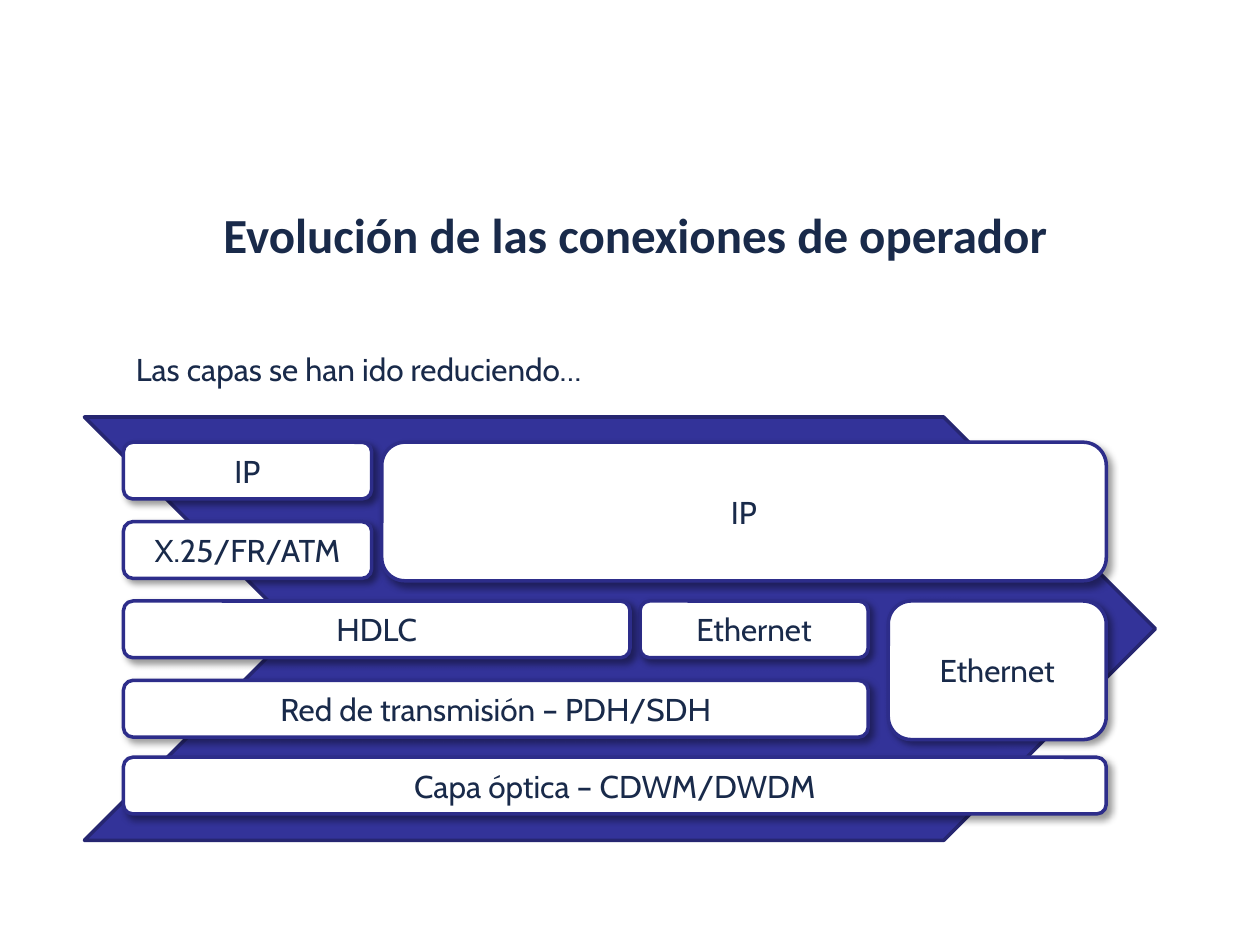
from lxml.etree import SubElement
from pptx import Presentation
from pptx.dml.color import RGBColor
from pptx.enum.shapes import MSO_SHAPE
from pptx.enum.text import MSO_ANCHOR, MSO_AUTO_SIZE, PP_ALIGN
from pptx.oxml.ns import qn
from pptx.util import Inches, Pt

TITLE = "Evolución de las conexiones de operador"
SUBTITLE = "Las capas se han ido reduciendo…"
INK, WHITE = "192A4A", "FFFFFF"
ARROW_FILL, ARROW_LINE, LAYER_LINE = "333399", "262671", "2D2D8A"

# Layers: text, left, right, top row, rows spanned
ROW_TOPS = [3.51, 4.14, 4.77, 5.4, 6.01]
ROW_HEIGHT, TALL_HEIGHT = 0.45, 1.1
LEFT, RIGHT = 0.98, 8.78
LAYERS = [
    ("Capa óptica – CDWM/DWDM", LEFT, RIGHT, 4, 1),
    ("Red de transmisión – PDH/SDH", LEFT, 6.89, 3, 1),
    ("Ethernet", 5.08, 6.89, 2, 1),
    ("HDLC", LEFT, 5, 2, 1),
    ("IP", LEFT, 2.95, 0, 1),
    ("X.25/FR/ATM", LEFT, 2.95, 1, 1),
    ("IP", 3.03, RIGHT, 0, 2),
    ("Ethernet", 7.05, RIGHT, 2, 2),
]


def color(value):
    return RGBColor.from_string(value)


def write(shape, text, font_name="Cabin", size=18, bold=False, align=PP_ALIGN.CENTER):
    shape.text_frame.word_wrap = True
    paragraph = shape.text_frame.paragraphs[0]
    paragraph.text = text
    paragraph.alignment = align
    font = paragraph.font
    font.name, font.size, font.bold = font_name, Pt(size), bold
    font.color.rgb = color(INK)
    return paragraph


def add_box(slide, kind, left, top, width, height, fill, line):
    shape = slide.shapes.add_shape(
        kind, Inches(left), Inches(top), Inches(width), Inches(height))
    shape.shadow.inherit = False
    shape.fill.solid()
    shape.fill.fore_color.rgb = color(fill)
    shape.line.color.rgb = color(line)
    shape.line.width = Pt(2)
    return shape


def add_shadow(shape):
    effects = shape.element.spPr.find(qn("a:effectLst"))
    shadow = SubElement(effects, qn("a:outerShdw"), blurRad=str(Pt(4)),
                        dist=str(Pt(3)), dir=str(45 * 60000), algn="tl", rotWithShape="0")
    shade = SubElement(shadow, qn("a:srgbClr"), val="000000")
    SubElement(shade, qn("a:alpha"), val="40000")


def add_layer(slide, text, left, right, row, span):
    height = ROW_HEIGHT if span == 1 else TALL_HEIGHT
    shape = add_box(slide, MSO_SHAPE.ROUNDED_RECTANGLE, left, ROW_TOPS[row],
                    right - left, height, WHITE, LAYER_LINE)
    add_shadow(shape)
    shape.text_frame.vertical_anchor = MSO_ANCHOR.MIDDLE
    properties = write(shape, text)._p.get_or_add_pPr()
    properties.set("marL", str(Inches(0.38)))
    properties.set("indent", str(Inches(-0.38)))


def add_label(slide, left, top, width, height):
    label = slide.shapes.add_textbox(
        Inches(left), Inches(top), Inches(width), Inches(height))
    label.text_frame.auto_size = MSO_AUTO_SIZE.SHAPE_TO_FIT_TEXT
    return label


def main():
    presentation = Presentation()
    presentation.slide_width, presentation.slide_height = Inches(10), Inches(7.5)
    slide = presentation.slides.add_slide(presentation.slide_layouts[6])

    # Background arrow
    add_box(slide, MSO_SHAPE.CHEVRON, 0.67, 3.31, 8.5, 3.36, ARROW_FILL, ARROW_LINE)

    # Title and subtitle
    title = add_label(slide, 0.67, 1.62, 8.74, 0.54)
    write(title, TITLE, "Calibri", 28, True).line_spacing = 0.92
    write(add_label(slide, LEFT, 2.73, 4.09, 0.4), SUBTITLE, align=PP_ALIGN.LEFT)

    # Network layers
    for layer in LAYERS:
        add_layer(slide, *layer)

    presentation.save("out.pptx")


if __name__ == "__main__":
    main()
